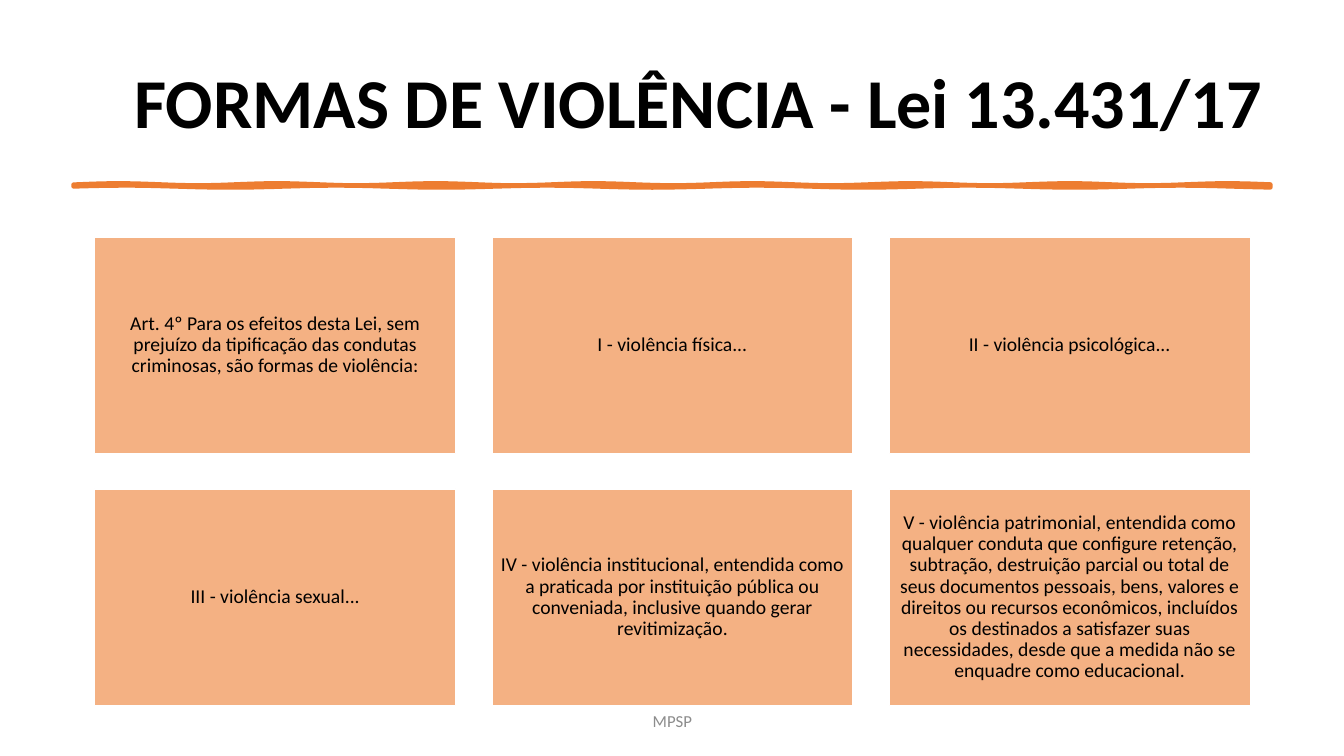
from dataclasses import dataclass
from math import sin

from pptx import Presentation
from pptx.dml.color import RGBColor
from pptx.enum.shapes import MSO_SHAPE as Shape
from pptx.enum.text import MSO_ANCHOR as Anchor, MSO_AUTO_SIZE as AutoSize, PP_ALIGN as Align
from pptx.util import Inches, Pt


@dataclass(frozen=True)
class Theme:
    font: str = "Calibri"
    ink: RGBColor = RGBColor(0x00, 0x00, 0x00)
    muted: RGBColor = RGBColor(0x8C, 0x8C, 0x8C)
    accent: RGBColor = RGBColor(0xED, 0x7D, 0x31)
    card: RGBColor = RGBColor(0xF4, 0xB1, 0x83)
    border: RGBColor = RGBColor(0xFF, 0xFF, 0xFF)
    title_size: int = 50
    card_size: int = 14
    footer_size: int = 12


THEME = Theme()

FORMS = [
    "Art. 4º Para os efeitos desta Lei, sem prejuízo da tipificação das condutas "
    "criminosas, são formas de violência:",
    "I - violência física...",
    "II - violência psicológica...",
    "III - violência sexual...",
    "IV - violência institucional, entendida como a praticada por instituição pública "
    "ou conveniada, inclusive quando gerar revitimização.",
    "V - violência patrimonial, entendida como qualquer conduta que configure retenção, "
    "subtração, destruição parcial ou total de seus documentos pessoais, bens, valores e "
    "direitos ou recursos econômicos, incluídos os destinados a satisfazer suas "
    "necessidades, desde que a medida não se enquadre como educacional.",
]


def write(box, text, size, color, align, bold=False, spacing=1.0):
    """Set one paragraph of text, centred vertically in its box."""
    frame = box.text_frame
    frame.text = text
    frame.word_wrap = True
    frame.auto_size = AutoSize.NONE
    frame.vertical_anchor = Anchor.MIDDLE
    para = frame.paragraphs[0]
    para.alignment = align
    para.line_spacing = spacing
    for span in para.runs:
        span.font.name = THEME.font
        span.font.size = Pt(size)
        span.font.bold = bold
        span.font.color.rgb = color


def add_title(page, text):
    title = page.shapes.title
    title.left, title.top = Inches(1.23), Inches(0.55)
    title.width, title.height = Inches(11.5), Inches(1)
    write(title, text, THEME.title_size, THEME.ink, Align.LEFT, bold=True, spacing=0.9)


def add_brush_rule(page, left, right, middle):
    """Draw a hand-brushed rule: two gently waving edges, closed into one outline."""
    steps = 120
    xs = [left + (right - left) * step / steps for step in range(steps + 1)]
    upper = [(x, middle - 0.01 + 0.01 * sin(4 * x)) for x in xs]
    lower = [(x, middle + 0.01 + 0.01 * sin(3 * x + 1)) for x in xs]
    outline = [(Inches(x), Inches(y)) for x, y in upper + lower[::-1]]
    builder = page.shapes.build_freeform(*outline[0])
    builder.add_line_segments(outline[1:], close=True)
    rule = builder.convert_to_shape()
    rule.shadow.inherit = False
    rule.fill.solid()
    rule.fill.fore_color.rgb = THEME.accent
    rule.line.color.rgb = THEME.accent
    rule.line.width = Pt(3.25)


def add_footer(page, text):
    box = page.shapes.add_textbox(Inches(4.42), Inches(6.95), Inches(4.5), Inches(0.4))
    write(box, text, THEME.footer_size, THEME.muted, Align.CENTER)


def add_card(page, text, left, top):
    card = page.shapes.add_shape(
        Shape.RECTANGLE, Inches(left), Inches(top), Inches(3.58), Inches(2.15))
    card.shadow.inherit = False
    card.fill.solid()
    card.fill.fore_color.rgb = THEME.card
    card.line.color.rgb = THEME.border
    card.line.width = Pt(1)
    write(card, text, THEME.card_size, THEME.ink, Align.CENTER, spacing=0.9)
    frame = card.text_frame
    frame.margin_left = frame.margin_right = Inches(0.06)
    frame.margin_top = frame.margin_bottom = Inches(0.06)


def main():
    deck = Presentation()
    deck.slide_width, deck.slide_height = Inches(13.33), Inches(7.5)
    page = deck.slides.add_slide(deck.slide_layouts[5])

    # Heading and footer
    add_title(page, "FORMAS DE VIOLÊNCIA - Lei 13.431/17")
    add_brush_rule(page, 0.73, 12.6, 1.84)
    add_footer(page, "MPSP")

    # Cards in two rows of three
    for index, text in enumerate(FORMS):
        row, column = divmod(index, 3)
        add_card(page, text, 0.94 + 3.94 * column, 2.35 + 2.5 * row)

    deck.save("out.pptx")


if __name__ == "__main__":
    main()
